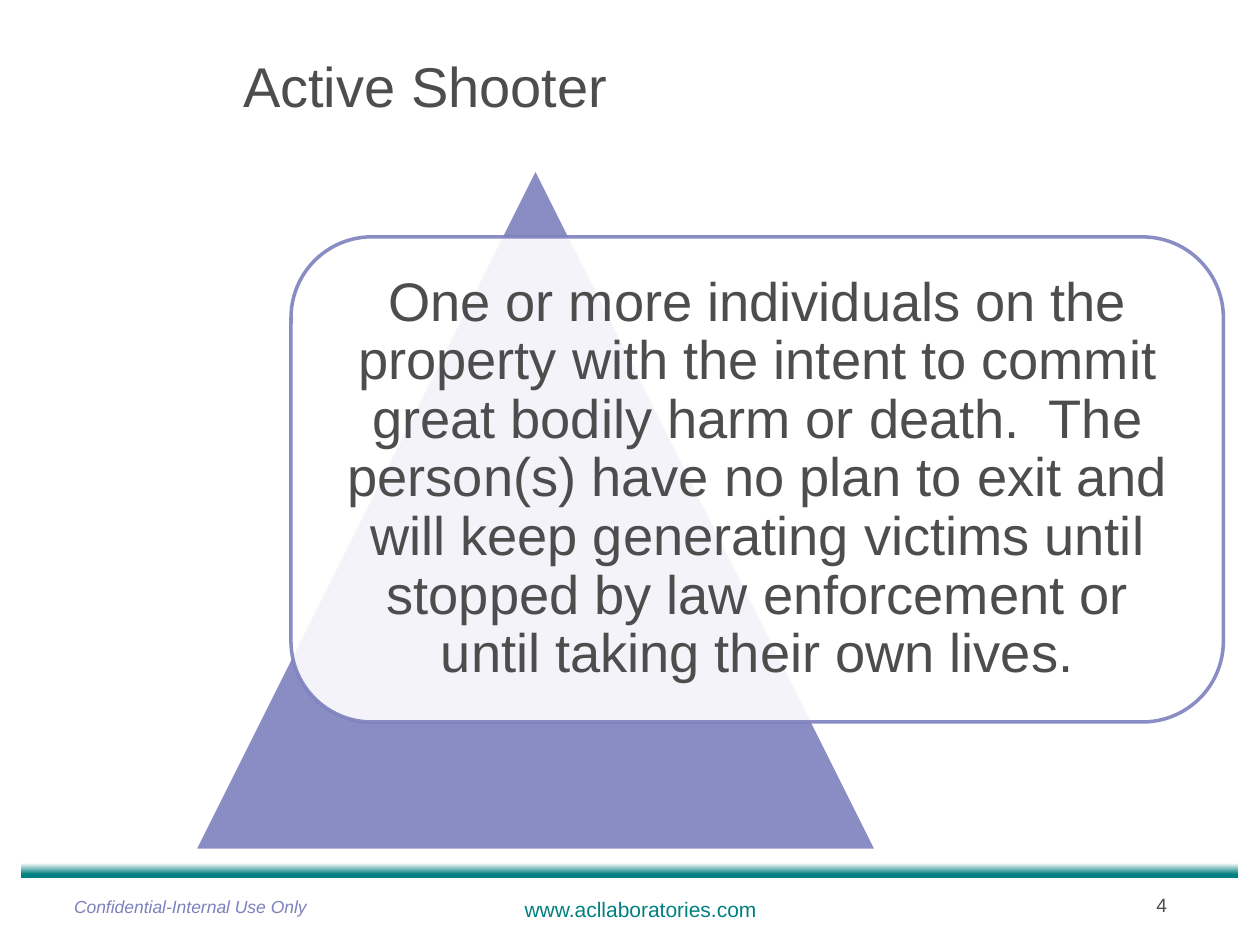
import pptx
import pptx.dml.color
import pptx.enum.shapes
import pptx.enum.text
import pptx.oxml
import pptx.oxml.ns
import pptx.util

COLORS = {"white": "FFFFFF", "teal": "008080", "violet": "7D81BE", "gray": "4D4D4D"}
WIDTH, HEIGHT = pptx.util.Inches(10), pptx.util.Inches(7.5)
SHAPES = pptx.enum.shapes.MSO_SHAPE
ALIGN = pptx.enum.text.PP_ALIGN
ANCHOR = pptx.enum.text.MSO_ANCHOR


def write_text(shape, text, size, color="gray", align=ALIGN.LEFT, anchor=ANCHOR.TOP,
               italic=False, line_spacing=1.0, margin=None):
    frame = shape.text_frame
    frame.word_wrap = True
    frame.auto_size = pptx.enum.text.MSO_AUTO_SIZE.NONE
    frame.vertical_anchor = anchor
    if margin is not None:
        frame.margin_left = frame.margin_right = pptx.util.Inches(margin)
        frame.margin_top = frame.margin_bottom = pptx.util.Inches(margin)
    frame.text = text
    paragraph = frame.paragraphs[0]
    paragraph.alignment = align
    paragraph.line_spacing = line_spacing
    font = paragraph.runs[0].font
    font.name, font.size, font.italic = "Arial", pptx.util.Pt(size), italic
    font.color.rgb = pptx.dml.color.RGBColor.from_string(COLORS[color])


def paint(color_format, color, opacity=100):
    """Set a fill or line colour, with opacity in percent."""
    color_format.rgb = pptx.dml.color.RGBColor.from_string(COLORS[color])
    if opacity < 100:
        for element in color_format._xFill.iter(pptx.oxml.ns.qn("a:srgbClr")):
            alpha = pptx.oxml.parse_xml(
                f'<a:alpha {pptx.oxml.ns.nsdecls("a")} val="{opacity * 1000}"/>')
            element.append(alpha)


presentation = pptx.Presentation()
presentation.slide_width, presentation.slide_height = WIDTH, HEIGHT
slide = presentation.slides.add_slide(presentation.slide_layouts[5])

# Title
title = slide.shapes.title
title.left, title.top = int(WIDTH * 0.183), pptx.util.Inches(0.25)
title.width, title.height = int(WIDTH * 0.783), pptx.util.Inches(0.92)
write_text(title, "Active Shooter", 32, anchor=ANCHOR.MIDDLE, line_spacing=0.9)

# Footer rule, fading from white down to teal
rule_margin = pptx.util.Inches(0.17)
rule = slide.shapes.add_shape(SHAPES.RECTANGLE, rule_margin, pptx.util.Inches(6.85),
                              WIDTH - 2 * rule_margin, pptx.util.Inches(0.12))
rule.shadow.inherit = False
rule.line.fill.background()
rule.fill.gradient()
rule.fill.gradient_angle = 270
for stop, position, color in zip(rule.fill.gradient_stops, (0, 0.74), ("white", "teal")):
    stop.position = position
    stop.color.rgb = pptx.dml.color.RGBColor.from_string(COLORS[color])

# Triangle with the definition panel over it
panels = [
    (SHAPES.ISOSCELES_TRIANGLE, (1.54, 1.33, 5.42, 5.42), "violet", "white", 100),
    (SHAPES.ROUNDED_RECTANGLE, (2.31, 1.88, 7.4, 3.85), "white", "violet", 90),
]
for kind, box, fill_color, line_color, line_opacity in panels:
    panel = slide.shapes.add_shape(kind, *map(pptx.util.Inches, box))
    panel.shadow.inherit = False
    panel.fill.solid()
    paint(panel.fill.fore_color, fill_color, 90)
    panel.line.width = pptx.util.Pt(2)
    paint(panel.line.color, line_color, line_opacity)

write_text(panel, "One or more individuals on the property with the intent to commit great "
           "bodily harm or death.  The person(s) have no plan to exit and will keep "
           "generating victims until stopped by law enforcement or until taking their "
           "own lives.", 31, align=ALIGN.CENTER, anchor=ANCHOR.MIDDLE,
           line_spacing=0.9, margin=0.13)

# Footer texts
footers = [
    ("Confidential-Internal Use Only", (0, 7.06, 3.02, 0.43),
     {"size": 10, "color": "violet", "align": ALIGN.CENTER, "italic": True}),
    ("www.acllaboratories.com", (3.58, 7.07, 3.01, 0.3),
     {"size": 12, "color": "teal", "align": ALIGN.CENTER}),
    ("4", (9.08, 7.04, 0.51, 0.29), {"size": 11}),
]
for text, box, text_format in footers:
    footer = slide.shapes.add_textbox(*map(pptx.util.Inches, box))
    write_text(footer, text, **text_format)

presentation.save("out.pptx")
